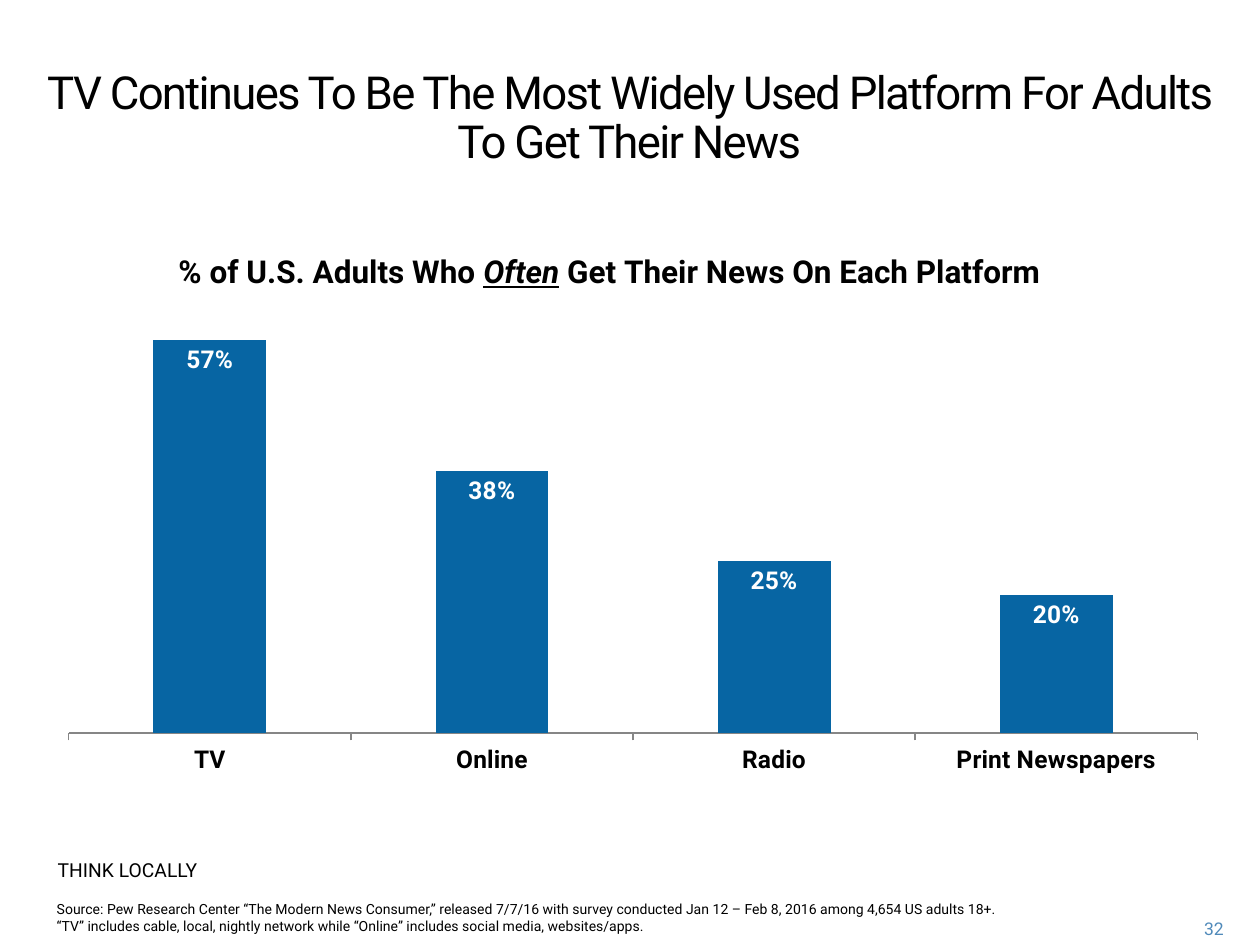
from lxml import etree
from pptx import Presentation
from pptx.chart.data import CategoryChartData
from pptx.dml.color import RGBColor
from pptx.enum import chart as charts, text
from pptx.oxml import ns
from pptx.util import Inches, Pt

# Content
TITLE = "TV Continues To Be The Most Widely Used Platform For Adults To Get Their News"
CHART_TITLE = [("% of U.S. Adults Who ", False), ("Often", True),
               (" Get Their News On Each Platform", False)]
NEWS_USE = [("TV", 0.57), ("Online", 0.38), ("Radio", 0.25), ("Print Newspapers", 0.20)]
SOURCE = [
    "Source: Pew Research Center “The Modern News Consumer,” released 7/7/16 with "
    "survey conducted Jan 12 – Feb 8, 2016 among 4,654 US adults 18+.",
    "“TV” includes cable, local, nightly network while “Online” includes social media, "
    "websites/apps.",
]
TAGLINE = "THINK LOCALLY"
PAGE_NUMBER = "32"

FONT = "Roboto"
BLACK = RGBColor(0, 0, 0)
WHITE = RGBColor(255, 255, 255)
BAR_BLUE = RGBColor(0x07, 0x65, 0xA3)
PAGE_BLUE = RGBColor(0x50, 0x8A, 0xBA)
AXIS_GRAY = RGBColor(0x86, 0x86, 0x86)


def style(font, size, color=BLACK, bold=False):
    font.name, font.size, font.bold = FONT, Pt(size), bold
    font.color.rgb = color


def place(shape, left, top, width, height):
    shape.left, shape.top = Inches(left), Inches(top)
    shape.width, shape.height = Inches(width), Inches(height)


def write(shape, lines, size, color=BLACK, align=text.PP_ALIGN.LEFT):
    """Fill a shape with one top-anchored paragraph and return it."""
    frame = shape.text_frame
    frame.word_wrap = True
    frame.auto_size = text.MSO_AUTO_SIZE.NONE
    frame.vertical_anchor = text.MSO_ANCHOR.TOP
    paragraph = frame.paragraphs[0]
    paragraph.alignment = align
    paragraph.space_before = Pt(0)
    for index, line in enumerate(lines):
        if index:
            paragraph.add_line_break()
        run = paragraph.add_run()
        run.text = line
        style(run.font, size, color)
    return paragraph


def set_layout(parent, **fractions):
    """Give a chart part a manual layout in fractions of the chart."""
    layout = parent.find(ns.qn("c:layout"))
    if layout is None:
        layout = etree.Element(ns.qn("c:layout"))
        parent.insert(0, layout)
    manual = etree.SubElement(layout, ns.qn("c:manualLayout"))
    if "w" in fractions:
        etree.SubElement(manual, ns.qn("c:layoutTarget"), val="inner")
    for axis in "xy":
        etree.SubElement(manual, ns.qn(f"c:{axis}Mode"), val="edge")
    for name, value in fractions.items():
        etree.SubElement(manual, ns.qn(f"c:{name}"), val=str(value))


presentation = Presentation()
presentation.slide_width, presentation.slide_height = Inches(10), Inches(7.5)
slide = presentation.slides.add_slide(presentation.slide_layouts[1])

# Title
title = slide.shapes.title
place(title, 0.18, 0.5, 9.63, 0.68)
paragraph = write(title, [TITLE], 26, align=text.PP_ALIGN.CENTER)
paragraph.line_spacing = Pt(28)
for run in paragraph.runs:
    run.font._element.set("spc", "-100")

# Column chart
data = CategoryChartData(number_format="0%")
data.categories = [platform for platform, share in NEWS_USE]
data.add_series("Series 1", [share for platform, share in NEWS_USE])
chart = slide.shapes.add_chart(
    charts.XL_CHART_TYPE.COLUMN_STACKED,
    Inches(0.36), Inches(1.93), Inches(9.33), Inches(4.32), data).chart
style(chart.font, 11)
chart.has_legend = False
chart.has_title = True
heading = chart.chart_title.text_frame.paragraphs[0]
for words, emphasis in CHART_TITLE:
    run = heading.add_run()
    run.text = words
    style(run.font, 18, bold=True)
    run.font.italic = run.font.underline = emphasis
set_layout(chart.chart_title._element, x=0.11, y=0.01)
set_layout(chart.plots[0]._element.getparent(), x=0.02, y=0.14, w=0.96, h=0.76)

plot = chart.plots[0]
plot.gap_width, plot.overlap = 150, 100
plot.vary_by_categories = False
bars = plot.series[0].format.fill
bars.solid()
bars.fore_color.rgb = BAR_BLUE
plot.has_data_labels = True
labels = plot.data_labels
labels.show_value = True
labels.position = charts.XL_LABEL_POSITION.INSIDE_END
labels.number_format, labels.number_format_is_linked = "0%", False
style(labels.font, 14, WHITE, bold=True)

# Axes
category_axis, value_axis = chart.category_axis, chart.value_axis
category_axis.major_tick_mark = charts.XL_TICK_MARK.OUTSIDE
category_axis.format.line.color.rgb = AXIS_GRAY
category_axis.format.line.width = Pt(0.75)
style(category_axis.tick_labels.font, 14, bold=True)
value_axis.minimum_scale, value_axis.maximum_scale = 0, 0.6
value_axis.has_major_gridlines = False
value_axis.visible = False

# Source note
note = slide.placeholders[1]
place(note, 0.35, 7.1, 7.83, 0.23)
paragraph = write(note, SOURCE, 8)
properties = paragraph._p.get_or_add_pPr()
properties.set("marL", "0")
properties.set("indent", "0")
etree.SubElement(properties, ns.qn("a:buNone"))

# Tagline and page number
for words, box, size, color, align in [
    (TAGLINE, (0.36, 6.76, 1.88, 0.47), 11, BLACK, text.PP_ALIGN.LEFT),
    (PAGE_NUMBER, (9.2, 7.24, 0.61, 0.25), 10, PAGE_BLUE, text.PP_ALIGN.RIGHT),
]:
    label = slide.shapes.add_textbox(*map(Inches, box))
    write(label, [words], size, color, align)

presentation.save("out.pptx")
